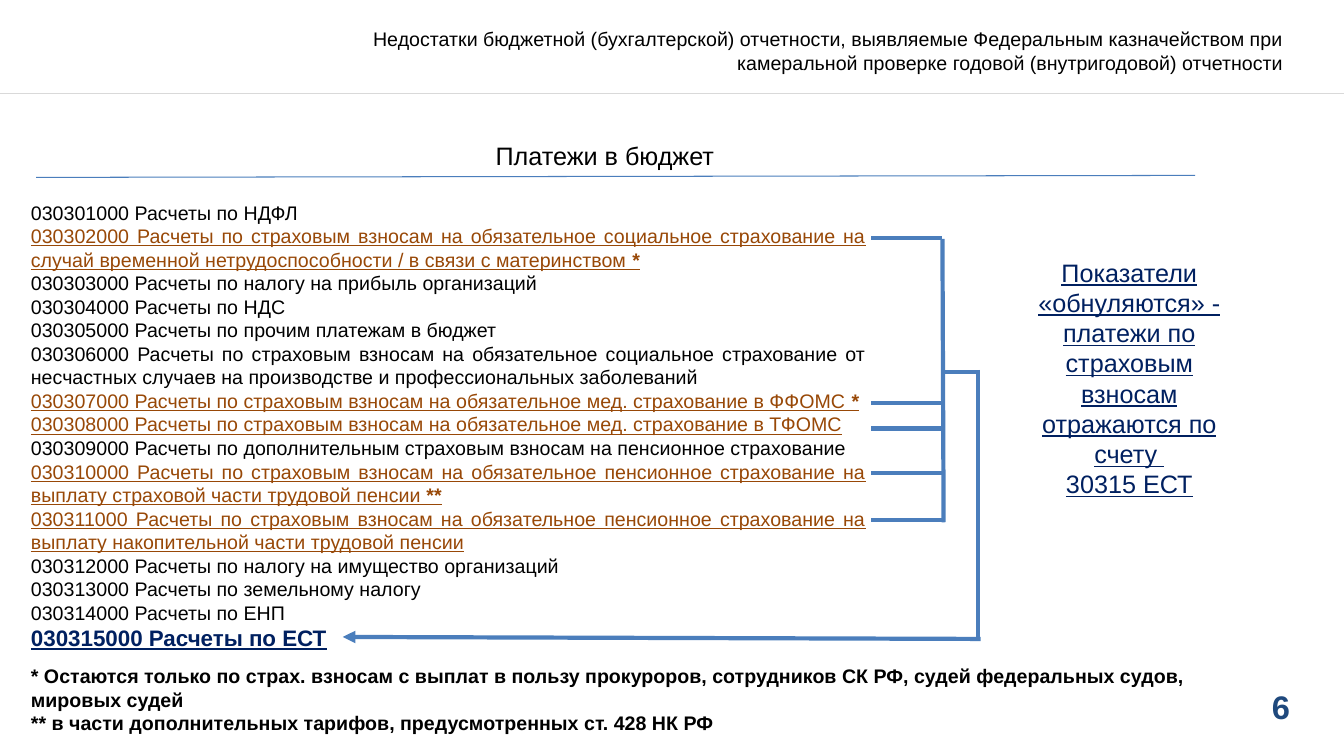
import pptx
import pptx.dml.color
import pptx.enum.shapes
import pptx.enum.text
import pptx.oxml
import pptx.oxml.ns
import pptx.util

Cm = pptx.util.Cm
Pt = pptx.util.Pt
ALIGN = pptx.enum.text.PP_ALIGN

COLOURS = {
    "text": "000000",
    "zeroed": "984807",
    "navy": "002060",
    "number": "1F497D",
    "bracket": "4B7EBC",
    "rule": "D9D9D9",
}

PLAIN = {"size": 14}
ZEROED = {"size": 14, "colour": "zeroed", "underline": True}
STAR = {**ZEROED, "bold": True}
TOTAL = {"size": 16, "colour": "navy", "underline": True, "bold": True}

ACCOUNTS = [
    [("030301000 Расчеты по НДФЛ", PLAIN)],
    [("030302000 Расчеты по страховым взносам на обязательное социальное страхование "
      "на случай временной нетрудоспособности / в связи с материнством ", ZEROED), ("*", STAR)],
    [("030303000 Расчеты по налогу на прибыль организаций", PLAIN)],
    [("030304000 Расчеты по НДС", PLAIN)],
    [("030305000 Расчеты по прочим платежам в бюджет", PLAIN)],
    [("030306000 Расчеты по страховым взносам на обязательное социальное страхование "
      "от несчастных случаев на производстве и профессиональных заболеваний", PLAIN)],
    [("030307000 Расчеты по страховым взносам на обязательное мед. страхование в ФФОМС ",
      ZEROED), ("*", STAR)],
    [("030308000 Расчеты по страховым взносам на обязательное мед. страхование в ТФОМС",
      ZEROED)],
    [("030309000 Расчеты по дополнительным страховым взносам на пенсионное страхование",
      PLAIN)],
    [("030310000 Расчеты по страховым взносам на обязательное пенсионное страхование "
      "на выплату страховой части трудовой пенсии ", ZEROED), ("**", STAR)],
    [("030311000 Расчеты по страховым взносам на обязательное пенсионное страхование "
      "на выплату накопительной части трудовой пенсии", ZEROED)],
    [("030312000 Расчеты по налогу на имущество организаций", PLAIN)],
    [("030313000 Расчеты по земельному налогу", PLAIN)],
    [("030314000 Расчеты по ЕНП", PLAIN)],
    [("030315000 Расчеты по ЕСТ", TOTAL)],
]


def add_span(para, text, size=14, colour="text", bold=False, underline=False):
    """Append one formatted run to a paragraph."""
    span = para.add_run()
    span.text = text
    span.font.name = "Arial"
    span.font.size = Pt(size)
    span.font.bold = bold
    span.font.underline = underline
    span.font.color.rgb = pptx.dml.color.RGBColor.from_string(COLOURS[colour])


def add_text(page, box, paragraphs, align=ALIGN.LEFT, margin=None):
    """Place a wrapping text box holding lists of (text, format) spans."""
    frame = page.shapes.add_textbox(*map(Cm, box)).text_frame
    frame.word_wrap = True
    if margin is not None:
        frame.margin_left = frame.margin_right = Cm(margin)
        frame.margin_top = frame.margin_bottom = Cm(margin)
    for index, spans in enumerate(paragraphs):
        para = frame.paragraphs[0] if index == 0 else frame.add_paragraph()
        para.alignment = align
        for text, style in spans:
            add_span(para, text, **style)


def add_line(page, start, end, colour="bracket", width=3, arrow=False):
    """Draw a straight line between two points, optionally with an arrowhead."""
    line = page.shapes.add_connector(
        pptx.enum.shapes.MSO_CONNECTOR.STRAIGHT, *map(Cm, (*start, *end)))
    line.line.color.rgb = pptx.dml.color.RGBColor.from_string(COLOURS[colour])
    line.line.width = Pt(width)
    if arrow:
        head = pptx.oxml.parse_xml(
            f'<a:tailEnd {pptx.oxml.ns.nsdecls("a")} type="triangle"/>')
        line.line._get_or_add_ln().append(head)
    line._element.spPr.append(
        pptx.oxml.parse_xml(f'<a:effectLst {pptx.oxml.ns.nsdecls("a")}/>'))


def add_header(page, box):
    """Place the running header and the rule along its bottom edge."""
    left, top, width, height = box
    bottom = top + height
    add_line(page, (left, bottom), (left + width, bottom), "rule", 1)
    add_text(page, (left + 8.64, top + 0.56, 23.95, 1.45), [[(
        "Недостатки бюджетной (бухгалтерской) отчетности, выявляемые Федеральным "
        "казначейством при камеральной проверке годовой (внутригодовой) отчетности",
        PLAIN)]], ALIGN.RIGHT)


def add_title(page, box):
    """Place the title above its thin, slightly rising underline."""
    left, top, width, height = box
    add_line(page, (left, top + height), (left + width, top + height - 0.05), width=0.75)
    add_text(page, (left + 11.33, top, 9.04, 1.02), [[("Платежи в бюджет", {"size": 18})]])


def add_bracket(page, box):
    """Gather the zeroed accounts in a bracket and point it at the total."""
    left, top, width, height = box
    right, bottom = left + width, top + height
    spine = left + 1.8
    for offset in (0, 4.17, 4.81, 5.92, 7.12):
        add_line(page, (left, top + offset), (spine, top + offset))
    add_line(page, (spine, top + 0.03), (spine + 0.03, top + 7.17))
    add_line(page, (spine, top + 3.38), (right, top + 3.38))
    add_line(page, (right, top + 3.33), (right, bottom))
    add_line(page, (right + 0.07, bottom + 0.05), (left - 13.31, bottom), arrow=True)


def add_conclusion(page, box):
    """Place the centred conclusion beside the bracket."""
    style = {"size": 18, "colour": "navy", "underline": True}
    add_text(page, box, [
        [("Показатели «обнуляются» - платежи по страховым взносам отражаются по счету ", style)],
        [("30315 ЕСТ", style)],
    ], ALIGN.CENTER)


def add_footnotes(page, box):
    """Place the bold footnotes."""
    style = {"size": 14, "bold": True}
    add_text(page, box, [
        [("* Остаются только по страх. взносам с выплат в пользу прокуроров, сотрудников "
          "СК РФ, судей федеральных судов, мировых судей", style)],
        [("** в части дополнительных тарифов, предусмотренных ст. 428 НК РФ", style)],
    ])


def main():
    """Build the slide and save it."""
    deck = pptx.Presentation()
    deck.slide_width, deck.slide_height = Cm(33.87), Cm(19.05)
    page = deck.slides.add_slide(deck.slide_layouts[6])
    add_header(page, (0, 0, 33.87, 2.36))
    add_title(page, (0.91, 3.4, 29.21, 1.07))
    add_text(page, (0.53, 4.93, 21.54, 11.63), ACCOUNTS, ALIGN.JUSTIFY)
    add_bracket(page, (21.95, 5.99, 2.69, 10.06))
    add_conclusion(page, (25.45, 6.35, 6.02, 6.4))
    add_footnotes(page, (0.53, 16.61, 31.01, 2.06))
    add_text(page, (24.71, 17.3, 7.8, 0.99),
             [[("6", {"size": 23.3, "colour": "number", "bold": True})]], ALIGN.RIGHT, margin=0)
    deck.save("out.pptx")


if __name__ == "__main__":
    main()
